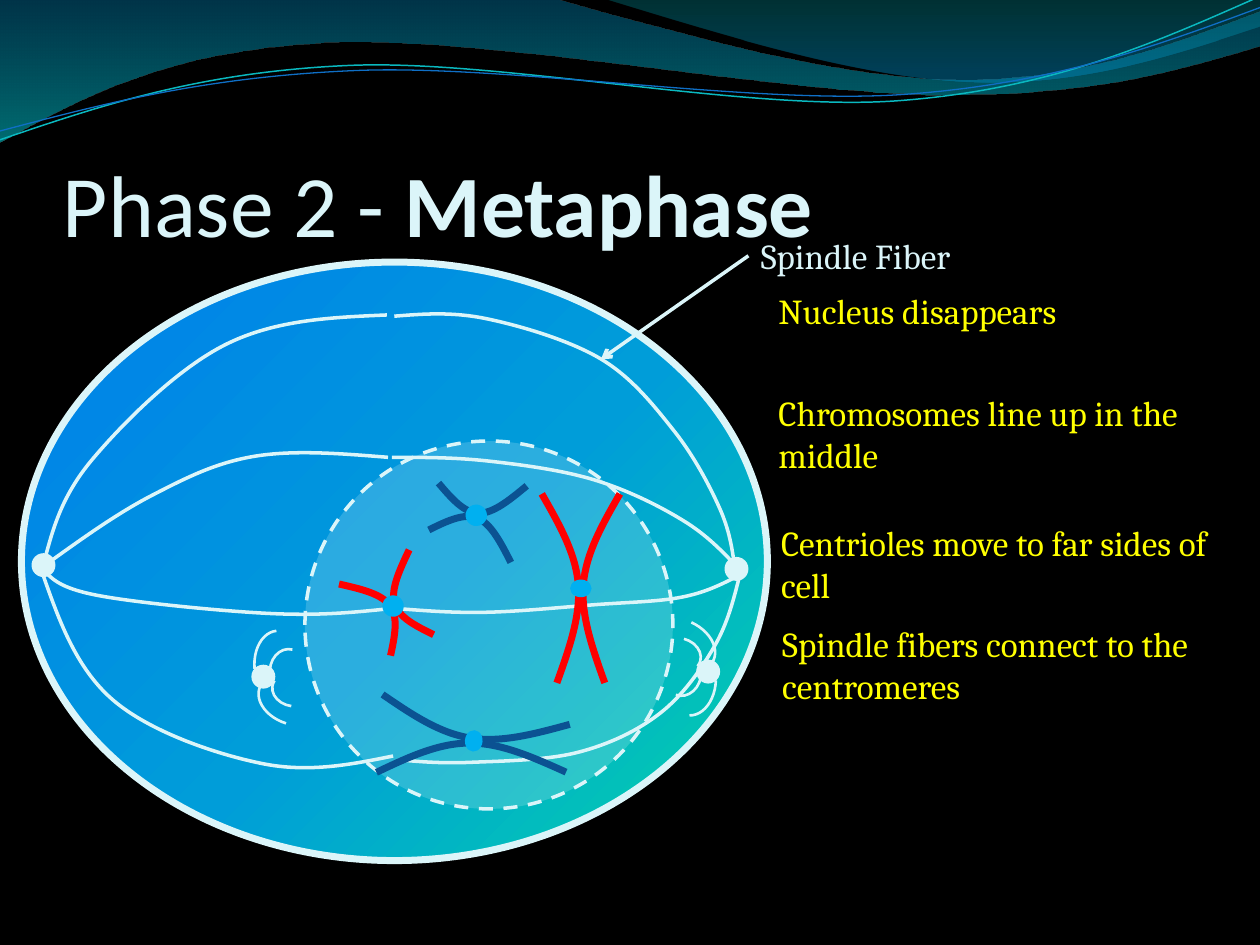
"""Build a slide on metaphase whose curves are smoothed through a few anchor points."""
from math import cos, radians, sin

from lxml.etree import SubElement
from pptx import Presentation
from pptx.dml.color import RGBColor
from pptx.enum.dml import MSO_LINE
from pptx.enum.shapes import MSO_CONNECTOR, MSO_SHAPE as Shape
from pptx.enum.text import MSO_ANCHOR, MSO_AUTO_SIZE as AutoSize
from pptx.oxml.ns import qn
from pptx.util import Cm, Pt

THEME = dict(
    back="000000", pale="DBF5F9", note="FFFF00", red="FF0000", navy="0B5292",
    centromere="00B0F0", wave_teal="0AB8BF", wave_blue="0F6FC6",
    title_font="Calibri", body_font="Cambria", title_size=50, body_size=20,
    fiber=2, arc=1.5, chromatid=4, membrane=4,
    wide_banner=[(0, "0074A1", 45), (100, "00C6CF", 55)],
    corner_banner=[(0, "00A1A9", 30), (80, "008BBF", 45)],
    cell=[(0, "03D4A8", 100), (45, "009DD9", 100), (85, "0087E6", 100), (100, "005CBF", 100)])

TITLE = [("Phase 2 - ", False), ("Metaphase", True)]
TEXTS = [
    ("Nucleus disappears", 6.08, 2.25, "note"),
    ("Chromosomes line up in the middle", 6.08, 3.06, "note"),
    ("Centrioles move to far sides of cell", 6.1, 4.09, "note"),
    ("Spindle fibers connect to the centromeres", 6.11, 4.89, "note"),
    ("Spindle Fiber", 5.94, 1.81, "pale")]
TEXT_WIDTH, TEXT_HEIGHT = 3.65, 0.44
POINTER = (5.94, 2.03, 4.77, 2.85)

BANNERS = {
    "wide_banner": [
        [(4.4, -0.01), (7.58, 0.63), (10, 0.09)],
        [(10.01, 0.36), (7.46, 0.75), (2.57, 0.34), (-0.01, 1.13)],
        [(0, 0)]],
    "corner_banner": [[(4.79, -0.01), (7.69, 0.65), (10, 0.21)], [(10, 0)]]}
WAVES = [
    ("wave_teal", 0.85, [(0, 1.11), (2.77, 0.52), (7.13, 0.8), (9.98, -0.02)]),
    ("wave_blue", 0.75, [(0, 1.04), (2.83, 0.56), (7.17, 0.75), (10, 0.06)])]

CELL = (3.13, 4.455, 5.92, 4.75)
NUCLEUS = (3.88, 4.96, 2.92, 2.92)
DOT = 0.19

SPINDLES = {
    (0.345, 4.485): [
        [(3.07, 2.5), (1.8, 2.73), (0.73, 3.65), (0.35, 4.46)],
        [(3.08, 3.63), (2.03, 3.62), (1.21, 3.93), (0.38, 4.47)],
        [(3.1, 4.83), (2.17, 4.87), (0.8, 4.73), (0.36, 4.54)],
        [(3.12, 6), (2.08, 6.06), (0.89, 5.55), (0.33, 4.53)]],
    (5.845, 4.515): [
        [(3.13, 2.51), (3.86, 2.53), (4.77, 2.85), (5.35, 3.42), (5.71, 4.03), (5.83, 4.49)],
        [(3.11, 3.63), (3.88, 3.66), (4.72, 3.81), (5.42, 4.13), (5.85, 4.5)],
        [(3.15, 4.83), (3.85, 4.86), (4.72, 4.8), (5.41, 4.74), (5.84, 4.58)],
        [(3.16, 6.03), (3.74, 6.05), (4.59, 5.97), (5.24, 5.66), (5.67, 5.13), (5.87, 4.57)]]}

CENTRIOLES = [((2.09, 5.37), 0), ((5.62, 5.33), 187.1)]
ASTER_ARCS = [
    dict(offset=(0.13, -0.08), size=(0.57, 0.4), turn=264.8, ends=(162, 0)),
    dict(offset=(0.19, -0.06), size=(0.32, 0.27), turn=285.1, ends=(153.89, 0)),
    dict(offset=(0.24, 0.18), size=(0.57, 0.4), turn=197.5, ends=(162, 3.22)),
    dict(offset=(0.24, 0.1), size=(0.34, 0.27), turn=187.8, ends=(162, 9.83))]

CHROMATID = [(-0.31, -0.5), (-0.02, -0.02), (-0.19, 0.5)]
CHROMOSOMES = [
    dict(color="red", center=(3.12, 4.81), length=0.69, turn=334.1, centromere=(0.17, 0.17)),
    dict(color="navy", center=(3.78, 4.09), length=0.69, turn=101.7, centromere=(0.17, 0.17)),
    dict(color="red", center=(4.61, 4.67), length=1.5, turn=0, centromere=(0.17, 0.14)),
    dict(color="navy", center=(3.76, 5.88), length=1.5, turn=274.5, centromere=(0.17, 0.14))]


def inch(value):
    return Cm(value * 2.54)


def rgb(color):
    return RGBColor.from_string(color)


def place(center, offset, turn):
    (cx, cy), (x, y), a = center, offset, radians(turn)
    return cx + x * cos(a) - y * sin(a), cy + x * sin(a) + y * cos(a)


def smooth(anchors):
    pts = [complex(*a) for a in anchors]
    tangents = [(after - before) / 6 for before, after in zip(pts, pts[2:])]
    handles = [(p - t, p + t) for p, t in zip(pts[1:], tangents)]
    curve = [pts[0]]
    if handles:
        curve.append((pts[0] + handles[0][0]) / 2)
        for p, (before, after) in zip(pts[1:], handles):
            curve += [before, p, after]
        curve += [(handles[-1][1] + pts[-1]) / 2, pts[-1]]
    return [(p.real, p.imag) for p in curve]


def join(edges):
    first, *others = [smooth(edge) for edge in edges]
    outline = list(first)
    for edge in [*others, first[:1]]:
        outline += [outline[-1], edge[0], *edge]
    return outline


def paint(sp, fill=None, line=None, width=0):
    sp.shadow.inherit = False
    if fill:
        sp.fill.solid()
        sp.fill.fore_color.rgb = rgb(fill)
    else:
        sp.fill.background()
    if line:
        sp.line.color.rgb = rgb(line)
        sp.line.width = Pt(width)
    else:
        sp.line.fill.background()
    return sp


def set_gradient(sp, stops, radial=False):
    sp.fill.gradient()
    grad = sp._element.spPr.find(qn("a:gradFill"))
    for child in list(grad):
        grad.remove(child)
    listing = SubElement(grad, qn("a:gsLst"))
    for pos, color, alpha in stops:
        stop = SubElement(listing, qn("a:gs"), pos=str(pos * 1000))
        clr = SubElement(stop, qn("a:srgbClr"), val=color)
        SubElement(clr, qn("a:alpha"), val=str(alpha * 1000))
    if radial:
        circle = SubElement(grad, qn("a:path"), path="circle")
        SubElement(circle, qn("a:fillToRect"), l="100000", t="100000")
    else:
        SubElement(grad, qn("a:lin"), ang="5400000", scaled="0")


def add_curve(shapes, bezier, **style):
    start, *rest = [(inch(x), inch(y)) for x, y in bezier]
    builder = shapes.build_freeform(*start)
    builder.add_line_segments(rest, close=False)
    sp = builder.convert_to_shape()
    geom = sp._element.xpath(".//a:path")[0]
    steps = geom.findall(qn("a:lnTo"))
    for i in range(0, len(steps), 3):
        segment = SubElement(geom, qn("a:cubicBezTo"))
        for step in steps[i:i + 3]:
            segment.append(step[0])
            geom.remove(step)
    return paint(sp, **style)


def add_centered(shapes, kind, center, size, turn=0, **style):
    (x, y), (w, h) = center, size
    sp = shapes.add_shape(kind, *map(inch, (x - w / 2, y - h / 2, w, h)))
    sp.rotation = turn
    return paint(sp, **style)


def add_text(s, box, runs, font, size, color):
    tf = s.shapes.add_textbox(*map(inch, box)).text_frame
    tf.word_wrap = True
    for text, bold in runs:
        r = tf.paragraphs[0].add_run()
        r.text = text
        r.font.name, r.font.size, r.font.bold = font, Pt(size), bold
        r.font.color.rgb = rgb(color)
    return tf


def add_backdrop(s, t):
    s.background.fill.solid()
    s.background.fill.fore_color.rgb = rgb(t["back"])
    for name, edges in BANNERS.items():
        set_gradient(add_curve(s.shapes, join(edges)), t[name])
    for color, width, anchors in WAVES:
        add_curve(s.shapes, smooth(anchors), line=t[color], width=width)


def add_cell(s, t):
    cell = add_centered(s.shapes, Shape.OVAL, CELL[:2], CELL[2:], line=t["pale"], width=t["membrane"])
    set_gradient(cell, t["cell"], radial=True)
    nucleus = add_centered(s.shapes, Shape.OVAL, NUCLEUS[:2], NUCLEUS[2:],
                           fill=t["pale"], line=t["pale"], width=t["fiber"])
    nucleus.line.dash_style = MSO_LINE.DASH
    SubElement(nucleus._element.spPr.find(qn("a:solidFill"))[0], qn("a:alpha"), val="20000")


def add_spindle(shapes, t, pole, fibers):
    add_centered(shapes, Shape.OVAL, pole, (DOT, DOT), fill=t["pale"])
    for anchors in fibers:
        add_curve(shapes, smooth(anchors), line=t["pale"], width=t["fiber"])


def add_centriole(shapes, t, center, turn):
    add_centered(shapes, Shape.OVAL, center, (DOT, DOT), fill=t["pale"])
    for arc in ASTER_ARCS:
        sp = add_centered(shapes, Shape.ARC, place(center, arc["offset"], turn), arc["size"],
                          (arc["turn"] + turn) % 360, line=t["pale"], width=t["arc"])
        sp.adjustments[0], sp.adjustments[1] = arc["ends"]


def add_chromosome(shapes, t, color, center, length, turn, centromere):
    for side in (1, -1):
        anchors = [place(center, (side * x, y * length), turn) for x, y in CHROMATID]
        add_curve(shapes, smooth(anchors), line=t[color], width=t["chromatid"])
    add_centered(shapes, Shape.OVAL, center, centromere, turn, fill=t["centromere"])


def add_texts(s, t):
    tf = add_text(s, (0.5, 0.77, 9, 1.25), TITLE, t["title_font"], t["title_size"], t["pale"])
    tf.vertical_anchor = MSO_ANCHOR.BOTTOM
    tf.margin_left = tf.margin_right = tf.margin_bottom = 0
    for text, x, y, color in TEXTS:
        tf = add_text(s, (x, y, TEXT_WIDTH, TEXT_HEIGHT), [(text, False)],
                      t["body_font"], t["body_size"], t[color])
        tf.auto_size = AutoSize.SHAPE_TO_FIT_TEXT
    pointer = s.shapes.add_connector(MSO_CONNECTOR.STRAIGHT, *map(inch, POINTER))
    pointer.line.color.rgb = rgb(t["pale"])
    pointer.line.width = Pt(t["fiber"])
    SubElement(pointer.line._get_or_add_ln(), qn("a:tailEnd"), type="arrow")
    SubElement(pointer._element.spPr, qn("a:effectLst"))


def main():
    prs = Presentation()
    prs.slide_width, prs.slide_height = inch(10), inch(7.5)
    s = prs.slides.add_slide(prs.slide_layouts[6])
    add_backdrop(s, THEME)
    add_cell(s, THEME)
    for pole, fibers in SPINDLES.items():
        add_spindle(s.shapes.add_group_shape().shapes, THEME, pole, fibers)
    for center, turn in CENTRIOLES:
        add_centriole(s.shapes.add_group_shape().shapes, THEME, center, turn)
    add_texts(s, THEME)
    for chromosome in CHROMOSOMES:
        add_chromosome(s.shapes.add_group_shape().shapes, THEME, **chromosome)
    prs.save("out.pptx")


if __name__ == "__main__":
    main()
